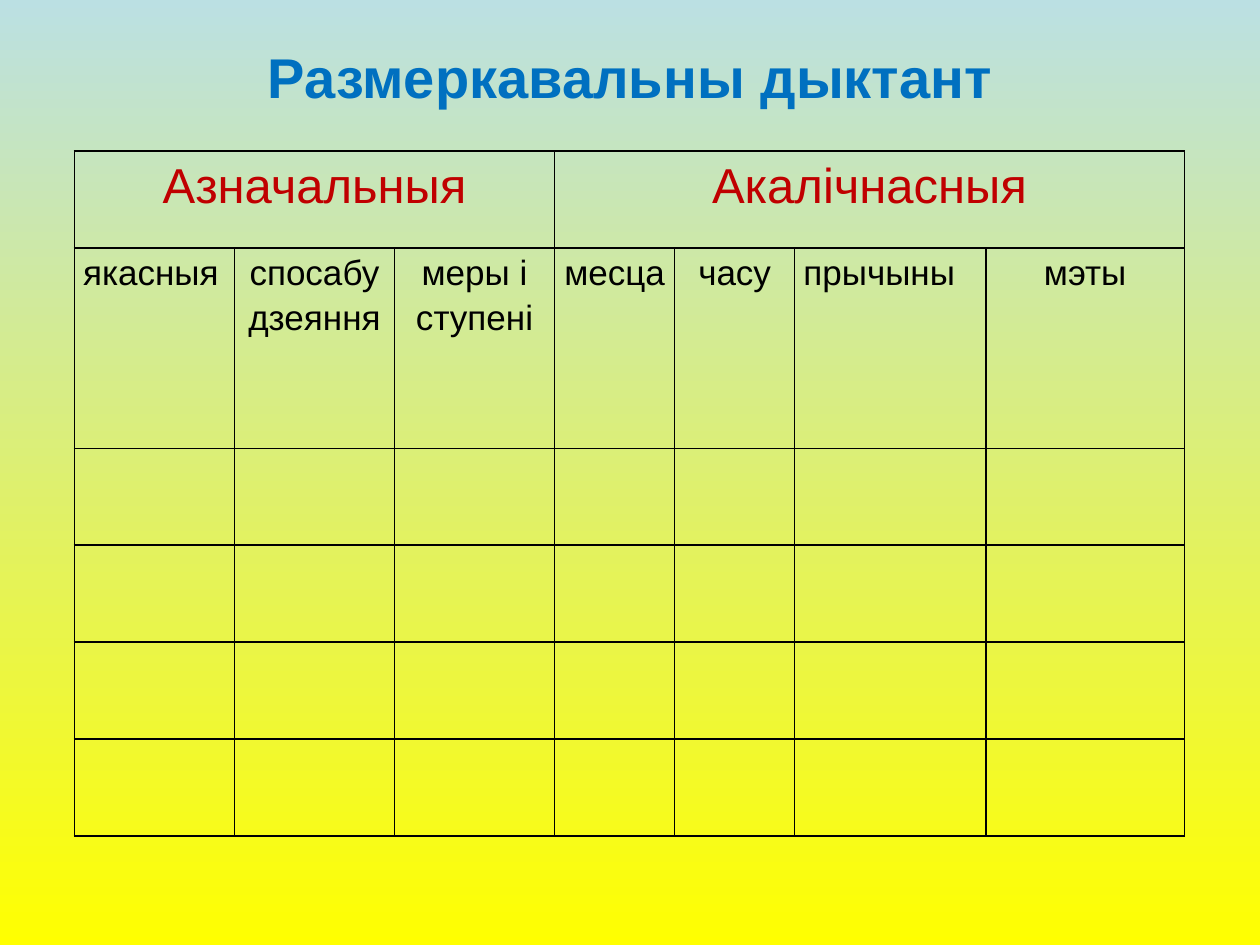
from dataclasses import dataclass

from lxml import etree
from pptx import Presentation
from pptx.dml.color import RGBColor
from pptx.enum import text
from pptx.oxml.ns import qn
from pptx.util import Pt

COLORS = {
    "sky": "BBE0E3",
    "yellow": "FFFF00",
    "title": "0070C0",
    "group": "C00000",
    "ink": "000000",
}
LEFT, CENTER = text.PP_ALIGN.LEFT, text.PP_ALIGN.CENTER


@dataclass
class Group:
    name: str
    first: int
    last: int


@dataclass
class Column:
    name: str
    width: float
    align: text.PP_ALIGN = CENTER


GROUPS = [Group("Азначальныя", 0, 2), Group("Акалічнасныя", 3, 6)]
COLUMNS = [
    Column("якасныя", 91.5, LEFT),
    Column("спосабу\nдзеяння", 91.5),
    Column("меры і\nступені", 91.5),
    Column("месца", 68.6),
    Column("часу", 68.6),
    Column("прычыны", 109.3, LEFT),
    Column("мэты", 113.4),
]
ROW_HEIGHT, NAMES_HEIGHT, ROW_COUNT = 55.4, 114.4, 6


def rgb(name: str) -> RGBColor:
    return RGBColor.from_string(COLORS[name])


def write(tf, content: str, *, size: float, color: str, bold: bool = False,
          align=CENTER, spacing: float = 1.0) -> None:
    """Fill a text frame, one paragraph for each line."""
    tf.text = content
    for p in tf.paragraphs:
        p.alignment = align
        p.line_spacing = spacing
        for r in p.runs:
            r.font.name = "Arial"
            r.font.size = Pt(size)
            r.font.bold = bold
            r.font.color.rgb = rgb(color)


def format_cell(cell) -> None:
    """Give a cell thin borders, no fill and narrow margins."""
    tc_pr = cell._tc.get_or_add_tcPr()
    for side in ("lnL", "lnR", "lnT", "lnB"):
        ln = etree.SubElement(tc_pr, qn(f"a:{side}"), w=str(Pt(1)))
        fill = etree.SubElement(ln, qn("a:solidFill"))
        etree.SubElement(fill, qn("a:srgbClr"), val=COLORS["ink"])
    cell.fill.background()
    cell.margin_left = cell.margin_right = Pt(5)
    cell.margin_top = cell.margin_bottom = 0


def add_background(slide) -> None:
    fill = slide.background.fill
    fill.gradient()
    fill.gradient_angle = 270
    for stop, name in zip(fill.gradient_stops, ("sky", "yellow")):
        stop.color.rgb = rgb(name)


def add_title(slide, content: str) -> None:
    sp = slide.shapes.title
    sp.left, sp.top, sp.width, sp.height = Pt(144.7), Pt(20.9), Pt(430.6), Pt(46)
    tf = sp.text_frame
    tf.word_wrap = True
    tf.auto_size = text.MSO_AUTO_SIZE.SHAPE_TO_FIT_TEXT
    tf.vertical_anchor = text.MSO_ANCHOR.TOP
    write(tf, content, size=32, color="title", bold=True)


def add_grid(slide) -> None:
    heights = [ROW_HEIGHT] * ROW_COUNT
    heights[1] = NAMES_HEIGHT
    width = sum(c.width for c in COLUMNS)
    table = slide.shapes.add_table(ROW_COUNT, len(COLUMNS), Pt(42.5), Pt(86.4),
                                   Pt(width), Pt(sum(heights))).table
    table.first_row = table.horz_banding = False
    for row, height in zip(table.rows, heights):
        row.height = Pt(height)
    for cell in table.iter_cells():
        format_cell(cell)

    # Group headings over merged cells
    for g in GROUPS:
        cell = table.cell(0, g.first)
        cell.merge(table.cell(0, g.last))
        write(cell.text_frame, g.name, size=28, color="group", spacing=1.15)

    # Column names
    for i, c in enumerate(COLUMNS):
        table.columns[i].width = Pt(c.width)
        write(table.cell(1, i).text_frame, c.name, size=20, color="ink",
              align=c.align, spacing=1.15)


def main() -> None:
    prs = Presentation()
    prs.slide_width, prs.slide_height = Pt(720), Pt(540)
    slide = prs.slides.add_slide(prs.slide_layouts[5])
    add_background(slide)
    add_title(slide, "Размеркавальны дыктант")
    add_grid(slide)
    prs.save("out.pptx")


if __name__ == "__main__":
    main()
